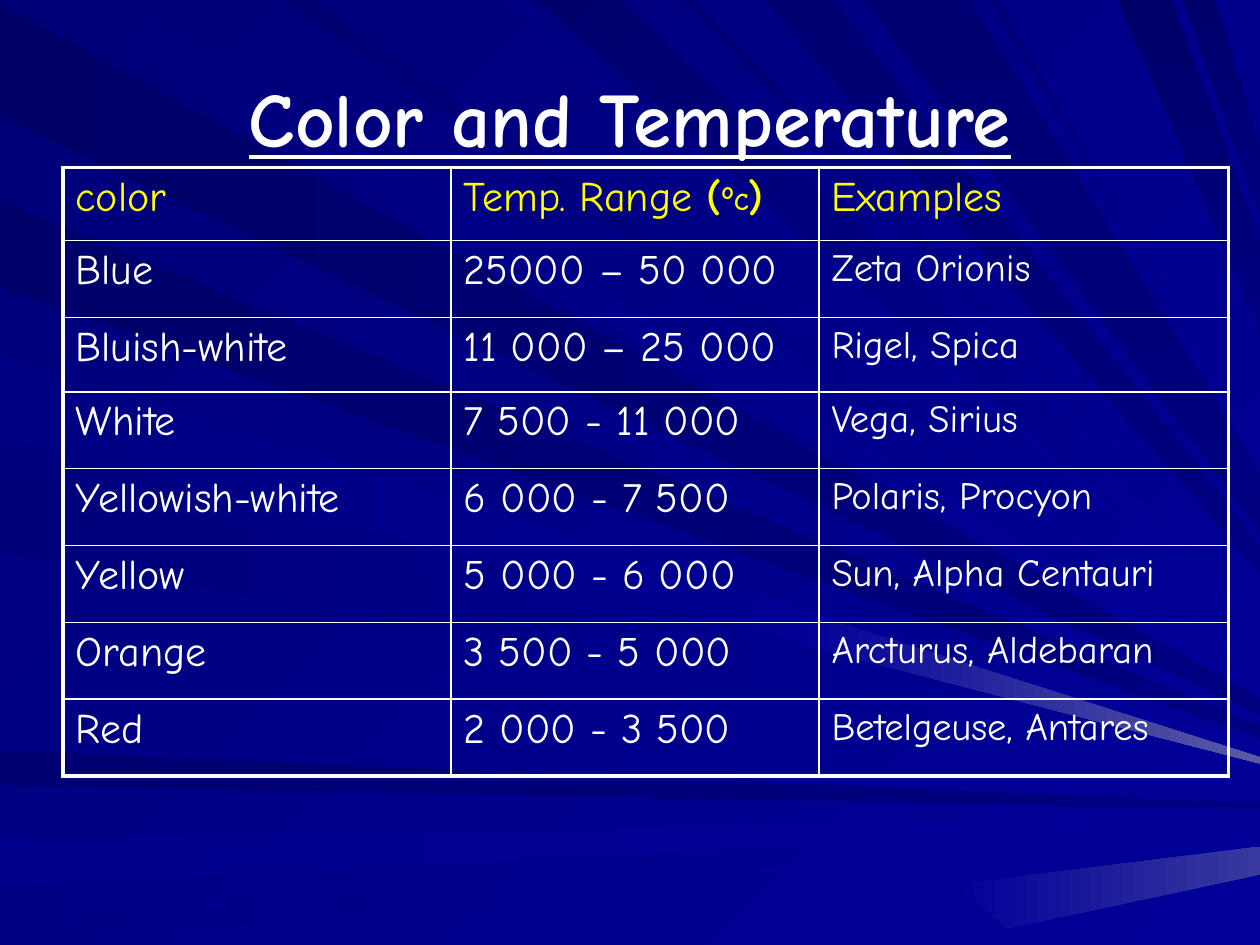
import pptx
import pptx.util
import pptx.dml.color
import pptx.enum.text
import pptx.oxml
import pptx.oxml.ns
from dataclasses import dataclass
from typing import NamedTuple

UNIT = 9144                      # drawing grid: hundredths of an inch
GRID_W, GRID_H = 1000, 750
FOCUS = (1165, 645)              # point off the right edge where the rays meet


@dataclass(frozen=True)
class Theme:
    font: str = "Comic Neue"
    text: str = "FFFFFF"
    head: str = "FFFF00"
    back: tuple = ("000078", "000099")
    mid: str = "000080"
    light: str = "000099"
    glow: str = "5A5AA6"
    title_size: int = 44
    body_size: int = 24
    example_size: int = 22
    thick: float = 2.25
    thin: float = 1


THEME = Theme()


class Ray(NamedTuple):
    near: int                    # where the ray starts along its slide edge
    far: int
    start: str
    end: str = THEME.light


class Part(NamedTuple):
    text: str
    bold: bool = False
    baseline: int = 0            # per cent


@dataclass(frozen=True)
class Grid:
    left: int = 50
    top: int = 133
    cols: tuple = (308, 292, 325)
    rows: tuple = (58, 61, 59) + (61,) * 5


@dataclass(frozen=True)
class Star:
    color: str
    temps: str
    examples: str


LEFT_RAYS = (
    Ray(2, 93, "000069", THEME.mid),
    Ray(596, 623, "000071", THEME.mid),
    Ray(665, 704, "00008C"),
    Ray(735, 750, "000085"),
    Ray(159, 228, "00006B", THEME.mid),
    Ray(278, 342, "00007E"),
    Ray(374, 437, "00007B"),
    Ray(283, 347, "000085"),
)
TOP_RAYS = (
    Ray(26, 101, "00007B"),
    Ray(398, 416, "000083"),
    Ray(426, 492, "00006D"),
    Ray(540, 552, "000073"),
    Ray(606, 661, "000073", THEME.mid),
    Ray(887, 930, "00006B", THEME.mid),
    Ray(939, 964, "00006D", THEME.mid),
    Ray(225, 247, "000070"),
    Ray(686, 770, "000073", THEME.mid),
    Ray(785, 792, "000078"),
)
# Brighter wedges at the right end of the rays
GLOWS = (
    (((1000, 694), (1000, 672), (756, 702), (800, 737)), "39399E"),
    (((1000, 601), (637, 485), (633, 511), (1000, 606)), THEME.glow),
)

HEADINGS = (
    (Part("color"),),
    (Part("Temp. Range "), Part("(", True), Part("o", True, 30),
     Part("C", True, 3), Part(")", True)),
    (Part("Examples"),),
)
STARS = (
    Star("Blue", "25000 – 50 000", "Zeta Orionis"),
    Star("Bluish-white", "11 000 – 25 000", "Rigel, Spica"),
    Star("White", "7 500 - 11 000", "Vega, Sirius"),
    Star("Yellowish-white", "6 000 - 7 500", "Polaris, Procyon"),
    Star("Yellow", "5 000 - 6 000", "Sun, Alpha Centauri"),
    Star("Orange", "3 500 - 5 000", "Arcturus, Aldebaran"),
    Star("Red", "2 000 - 3 500", "Betelgeuse, Antares"),
)


def rgb(value: str) -> pptx.dml.color.RGBColor:
    return pptx.dml.color.RGBColor.from_string(value)


def units(n: float) -> pptx.util.Emu:
    return pptx.util.Emu(int(n * UNIT))


def paint(fill, start: str, end: str, angle: int) -> None:
    """Fill with a two-colour gradient at a clockwise angle."""
    fill.gradient()
    fill.gradient_angle = (360 - angle) % 360
    for stop, color in zip(fill.gradient_stops, (start, end)):
        stop.color.rgb = rgb(color)


def style(font, color: str, size: float, **extra) -> None:
    for name, value in {"name": THEME.font, "size": pptx.util.Pt(size), **extra}.items():
        setattr(font, name, value)
    font.color.rgb = rgb(color)


def at_right_edge(point: tuple) -> tuple:
    """Where the line from a point to the focus crosses the right edge."""
    x, y = point
    share = (GRID_W - x) / (FOCUS[0] - x)
    return GRID_W, y + share * (FOCUS[1] - y)


def draw_outline(group, points: tuple, start: str, end: str, angle: int) -> None:
    builder = group.shapes.build_freeform(*points[0], scale=UNIT)
    builder.add_line_segments(points[1:], close=True)
    sp = builder.convert_to_shape()
    sp.shadow.inherit = False
    sp.line.fill.background()
    paint(sp.fill, start, end, angle)


def draw_ray(group, ray: Ray, from_top: bool) -> None:
    a, b = [(n, 0) if from_top else (0, n) for n in (ray.near, ray.far)]
    angle = (90 if ray.end == THEME.mid else 45) if from_top else 0
    draw_outline(group, (a, b, at_right_edge(b), at_right_edge(a)), ray.start, ray.end, angle)


def draw_borders(cell, widths: dict) -> None:
    tc_pr = cell._tc.get_or_add_tcPr()
    for side, width in widths.items():
        tc_pr.append(pptx.oxml.parse_xml(
            f'<a:ln{side} {pptx.oxml.ns.nsdecls("a")} w="{pptx.util.Pt(width)}">'
            f'<a:solidFill><a:srgbClr val="{THEME.text}"/></a:solidFill></a:ln{side}>'))


def write_cell(cell, parts: tuple, color: str, size: float) -> None:
    p = cell.text_frame.paragraphs[0]
    for part in parts:
        r = p.add_run()
        r.text = part.text
        style(r.font, color, size, bold=part.bold)
        if part.baseline:
            r._r.get_or_add_rPr().set("baseline", str(part.baseline * 1000))


def draw_table(s, grid: Grid) -> None:
    frame = s.shapes.add_table(len(grid.rows), len(grid.cols), units(grid.left),
                               units(grid.top), units(sum(grid.cols)), units(sum(grid.rows)))
    table = frame.table
    table.first_row = table.horz_banding = False
    for col, width in zip(table.columns, grid.cols):
        col.width = units(width)
    for row, height in zip(table.rows, grid.rows):
        row.height = units(height)
    body = [tuple((Part(t),) for t in (st.color, st.temps, st.examples)) for st in STARS]
    last_row, last_col = len(grid.rows) - 1, len(grid.cols) - 1
    for i, row in enumerate([HEADINGS, *body]):
        for j, parts in enumerate(row):
            cell = table.cell(i, j)
            outer = {"L": j == 0, "R": j == last_col, "T": i == 0, "B": i == last_row}
            draw_borders(cell, {k: THEME.thick if o else THEME.thin for k, o in outer.items()})
            cell.fill.background()
            example = i > 0 and j == last_col
            write_cell(cell, parts, THEME.text if i else THEME.head,
                       THEME.example_size if example else THEME.body_size)


def main() -> None:
    prs = pptx.Presentation()
    prs.slide_width, prs.slide_height = units(GRID_W), units(GRID_H)
    s = prs.slides.add_slide(prs.slide_layouts[5])

    # Background and light rays, kept behind the title
    paint(s.background.fill, *THEME.back, 45)
    group = s.shapes.add_group_shape()
    for from_top, rays in ((False, LEFT_RAYS), (True, TOP_RAYS)):
        for ray in rays:
            draw_ray(group, ray, from_top)
    for points, glow in GLOWS:
        draw_outline(group, points, THEME.light, glow, 0)
    s.shapes._spTree.insert(2, group._element)

    # Title
    title = s.shapes.title
    box = {"left": 50, "top": 30, "width": 900, "height": 125}
    for name, value in box.items():
        setattr(title, name, units(value))
    tf = title.text_frame
    tf.text = "Color and Temperature"
    tf.vertical_anchor = pptx.enum.text.MSO_ANCHOR.MIDDLE
    p = tf.paragraphs[0]
    p.alignment = pptx.enum.text.PP_ALIGN.CENTER
    style(p.runs[0].font, THEME.text, THEME.title_size, bold=True, underline=True)

    # Star table
    draw_table(s, Grid())
    prs.save("out.pptx")


if __name__ == "__main__":
    main()
